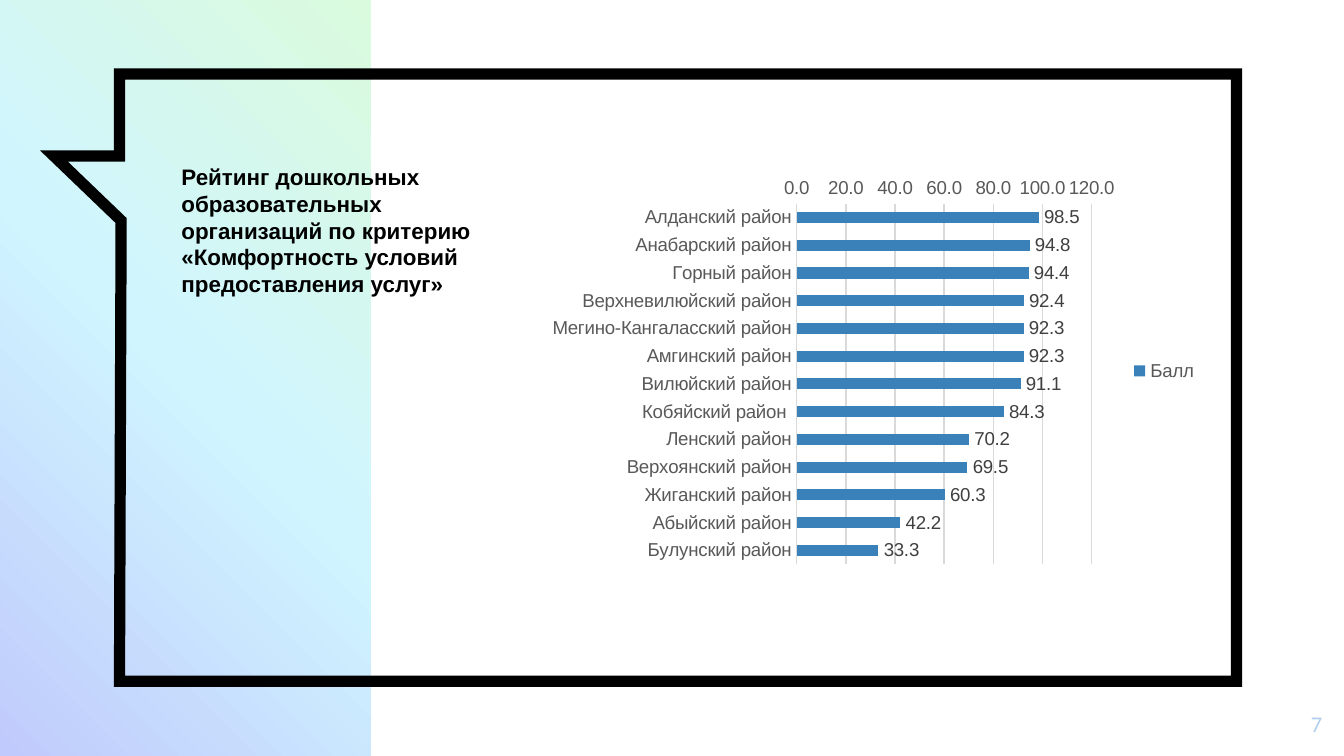
from copy import deepcopy

from lxml import etree
from pptx import Presentation
from pptx.chart.data import CategoryChartData
from pptx.dml.color import RGBColor
from pptx.enum.chart import XL_CHART_TYPE, XL_LABEL_POSITION, XL_LEGEND_POSITION, XL_TICK_MARK
from pptx.enum.shapes import MSO_SHAPE
from pptx.enum.text import PP_ALIGN
from pptx.oxml.ns import qn
from pptx.util import Cm, Pt

BAR_CLUSTERED = XL_CHART_TYPE.BAR_CLUSTERED
OUTSIDE_END = XL_LABEL_POSITION.OUTSIDE_END
LEGEND_RIGHT = XL_LEGEND_POSITION.RIGHT
NO_TICK = XL_TICK_MARK.NONE
RECTANGLE = MSO_SHAPE.RECTANGLE
LEFT, RIGHT = PP_ALIGN.LEFT, PP_ALIGN.RIGHT

BLACK = RGBColor(0x00, 0x00, 0x00)
LAVENDER = RGBColor(0xC0, 0xCA, 0xFC)
SKY = RGBColor(0xD0, 0xF5, 0xFF)
MINT = RGBColor(0xDA, 0xFB, 0xDD)
PALE_BLUE = RGBColor(0xAF, 0xCF, 0xEC)
BAR_BLUE = RGBColor(0x3A, 0x81, 0xBA)
AXIS_GRAY = RGBColor(0x59, 0x59, 0x59)
LABEL_GRAY = RGBColor(0x40, 0x40, 0x40)
GRID_GRAY = RGBColor(0xD9, 0xD9, 0xD9)

SCORES = [
    ("Алданский район", 98.5),
    ("Анабарский район", 94.8),
    ("Горный район", 94.4),
    ("Верхневилюйский район", 92.4),
    ("Мегино-Кангаласский район", 92.3),
    ("Амгинский район", 92.3),
    ("Вилюйский район", 91.1),
    ("Кобяйский район ", 84.3),
    ("Ленский район", 70.2),
    ("Верхоянский район", 69.5),
    ("Жиганский район", 60.3),
    ("Абыйский район", 42.2),
    ("Булунский район", 33.3),
]


def style_font(font, size, color, name="Arial", bold=False):
    font.size = Pt(size)
    font.name = name
    font.bold = bold
    font.color.rgb = color


def add_text(text, left, top, width, height, *, color, name="Arial", bold=False,
             align=LEFT, inset=0.13):
    box = slide.shapes.add_textbox(Cm(left), Cm(top), Cm(width), Cm(height))
    frame = box.text_frame
    frame.word_wrap = True
    frame.margin_top = frame.margin_bottom = Cm(inset)
    para = frame.paragraphs[0]
    para.alignment = align
    span = para.add_run()
    span.text = text
    style_font(span.font, 12, color, name, bold)


deck = Presentation()
deck.slide_width = Cm(25.4)
deck.slide_height = Cm(14.29)
slide = deck.slides.add_slide(deck.slide_layouts[6])

panel = slide.shapes.add_shape(RECTANGLE, 0, 0, Cm(7.01), deck.slide_height)
panel.shadow.inherit = False
panel.line.fill.background()
panel.fill.gradient()
panel.fill.gradient_angle = 45
stop_list = panel.fill._xPr.find(qn("a:gradFill")).find(qn("a:gsLst"))
stop_list.insert(1, deepcopy(stop_list[0]))
for stop, color, position in zip(panel.fill.gradient_stops, (LAVENDER, SKY, MINT), (0, 0.5, 1)):
    stop.color.rgb = color
    stop.position = position

bubble_points = [(23.37, 1.4), (23.37, 12.88), (2.26, 12.88), (2.29, 4.17), (1.02, 2.95), (2.26, 2.95)]
outline = slide.shapes.build_freeform(Cm(2.26), Cm(1.4))
outline.add_line_segments([(Cm(x), Cm(y)) for x, y in bubble_points], close=True)
bubble = outline.convert_to_shape()
bubble.shadow.inherit = False
bubble.fill.background()
bubble.line.color.rgb = BLACK
bubble.line.width = Pt(6)
etree.SubElement(bubble.line._get_or_add_ln(), qn("a:miter"), lim="800000")

add_text("7", 23.72, 13.18, 1.52, 1.09, color=PALE_BLUE, name="Calibri", align=RIGHT, inset=0.25)
add_text("Рейтинг дошкольных образовательных организаций по критерию "
         "«Комфортность условий предоставления услуг»",
         3.18, 2.95, 7.01, 2.82, color=BLACK, bold=True)

chart_data = CategoryChartData(number_format="0.0")
chart_data.categories = [district for district, score in SCORES]
chart_data.add_series("Балл", [score for district, score in SCORES])
chart = slide.shapes.add_chart(BAR_CLUSTERED, Cm(10.19), Cm(3.2), Cm(12.7), Cm(7.62), chart_data).chart
style_font(chart.font, 10, BLACK)
chart.has_title = False
chart.has_legend = True
chart.legend.position = LEGEND_RIGHT
chart.legend.include_in_layout = False
style_font(chart.legend.font, 10, AXIS_GRAY)

for axis in (chart.category_axis, chart.value_axis):
    axis.major_tick_mark = axis.minor_tick_mark = NO_TICK
    style_font(axis.tick_labels.font, 10, AXIS_GRAY)

chart.category_axis.reverse_order = True
chart.value_axis.format.line.fill.background()
chart.value_axis.tick_labels.number_format = "0.0"
chart.value_axis.tick_labels.number_format_is_linked = False
for line in (chart.category_axis.format.line, chart.value_axis.major_gridlines.format.line):
    line.color.rgb = GRID_GRAY
    line.width = Pt(0.75)

plot = chart.plots[0]
plot.gap_width = 150
plot.vary_by_categories = False
series = plot.series[0]
series.format.fill.solid()
series.format.fill.fore_color.rgb = BAR_BLUE
labels = series.data_labels
labels.show_value = True
labels.position = OUTSIDE_END
labels.number_format = "0.0"
labels.number_format_is_linked = False
style_font(labels.font, 10, LABEL_GRAY)

deck.save("out.pptx")
